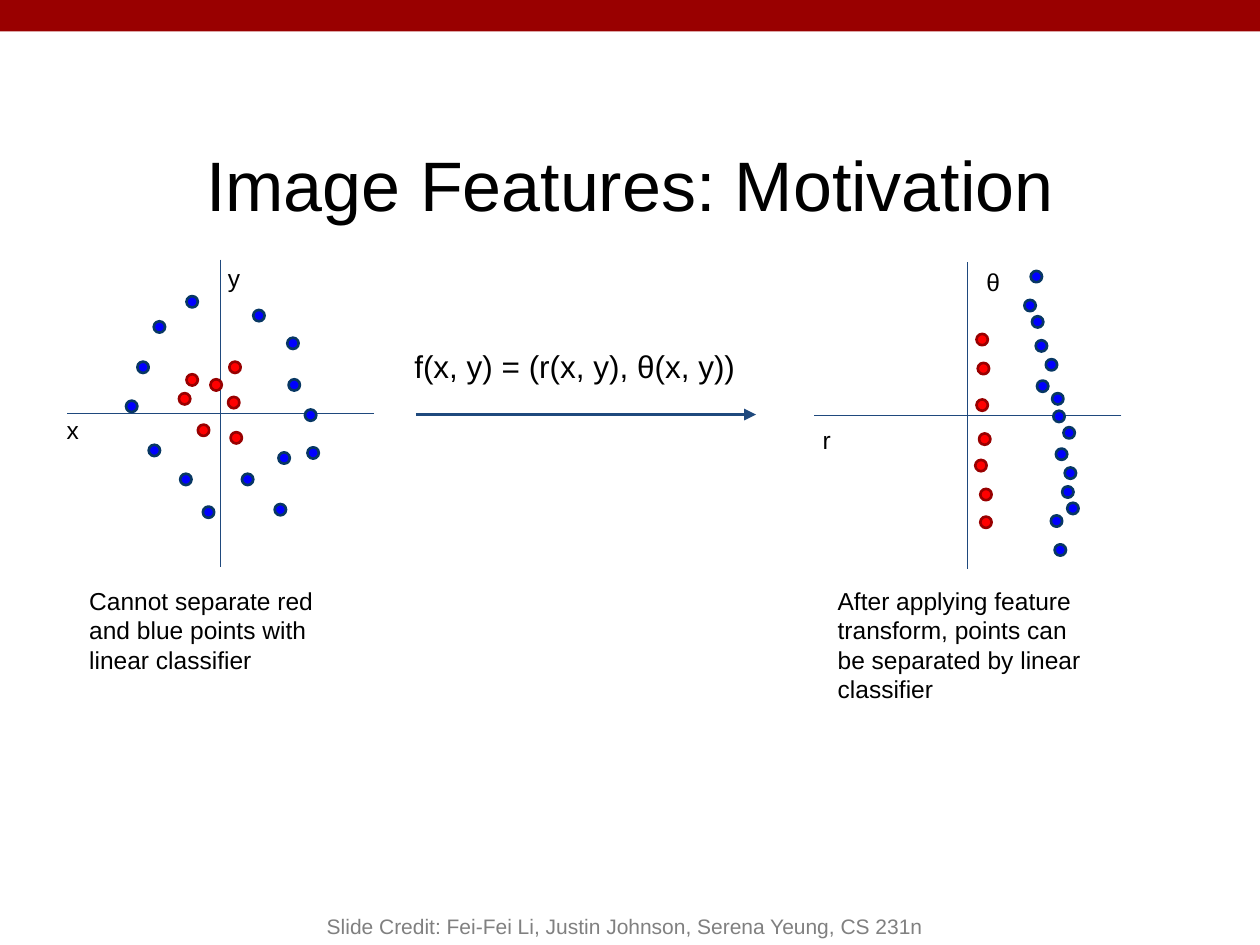
from typing import NamedTuple

import pptx
import pptx.util
from lxml import etree
from pptx.dml.color import RGBColor
from pptx.enum.shapes import MSO_CONNECTOR, MSO_SHAPE
from pptx.enum.text import MSO_ANCHOR, PP_ALIGN
from pptx.oxml.ns import qn
from pptx.util import Inches

BLACK = RGBColor(0x00, 0x00, 0x00)
GREY = RGBColor(0x80, 0x80, 0x80)
BANNER = RGBColor(0x99, 0x00, 0x00)
AXIS = RGBColor(0x1F, 0x49, 0x7D)
RED = RGBColor(0xFF, 0x00, 0x00)
RED_EDGE = RGBColor(0x98, 0x00, 0x00)
BLUE = RGBColor(0x00, 0x00, 0xFF)
BLUE_EDGE = RGBColor(0x07, 0x37, 0x63)

DOT = 0.09
AXIS_HALF = 1.22

Point = tuple[float, float]
Box = tuple[float, float, float, float]


class Label(NamedTuple):
    text: str
    box: Box


class Plot(NamedTuple):
    center: Point
    red: list[Point]
    blue: list[Point]
    labels: list[Label]


PLOTS = [
    Plot(
        center=(1.75, 3.28),
        red=[(1.48, 2.97), (1.82, 2.87), (1.57, 3.37), (1.83, 3.43),
             (1.81, 3.15), (1.42, 3.12), (1.67, 3.01)],
        blue=[(1.22, 2.55), (1.48, 2.35), (2.01, 2.46), (2.29, 3.01),
              (2.21, 3.59), (1.92, 3.76), (1.43, 3.76), (1.18, 3.53),
              (1.00, 3.18), (1.09, 2.87), (2.28, 2.68), (2.44, 3.55),
              (1.61, 4.02), (2.42, 3.25), (2.18, 4.00)],
        labels=[
            Label("x", (0.43, 3.19, 0.29, 0.3)),
            Label("y", (1.71, 1.99, 0.29, 0.3)),
            Label("Cannot separate red and blue points with linear classifier",
                  (0.61, 4.55, 2.27, 0.96)),
        ],
    ),
    Plot(
        center=(7.68, 3.3),
        red=[(7.78, 4.10), (7.76, 2.88), (7.75, 2.65), (7.77, 3.44),
             (7.75, 3.17), (7.74, 3.65), (7.78, 3.88)],
        blue=[(8.37, 4.32), (8.19, 2.51), (8.13, 2.38), (8.23, 3.02),
              (8.43, 3.86), (8.30, 2.85), (8.35, 3.12), (8.45, 3.71),
              (8.47, 3.99), (8.44, 3.39), (8.22, 2.70), (8.38, 3.56),
              (8.18, 2.15), (8.36, 3.26), (8.34, 4.09)],
        labels=[
            Label("r", (6.43, 3.27, 0.29, 0.3)),
            Label("θ", (7.73, 2.02, 0.29, 0.3)),
            Label("After applying feature transform, points can be separated "
                  "by linear classifier", (6.55, 4.55, 2.27, 0.96)),
        ],
    ),
]


def write_text(sp, text: str, *, size: float = 14, color: RGBColor = BLACK,
               align: PP_ALIGN = PP_ALIGN.LEFT,
               anchor: MSO_ANCHOR = MSO_ANCHOR.TOP,
               inset: Point = (0.1, 0.1)) -> None:
    tf = sp.text_frame
    tf.word_wrap = True
    tf.vertical_anchor = anchor
    tf.margin_left = tf.margin_right = Inches(inset[0])
    tf.margin_top = tf.margin_bottom = Inches(inset[1])
    p = tf.paragraphs[0]
    p.alignment = align
    r = p.add_run()
    r.text = text
    r.font.name = "Arial"
    r.font.size = pptx.util.Pt(size)
    r.font.color.rgb = color


def add_text(slide, label: Label, **fmt) -> None:
    sp = slide.shapes.add_textbox(*map(Inches, label.box))
    write_text(sp, label.text, **fmt)


def add_line(slide, start: Point, end: Point, width: float = 0.75,
             arrow: bool = False) -> None:
    line = slide.shapes.add_connector(
        MSO_CONNECTOR.STRAIGHT, *map(Inches, (*start, *end)))
    line.line.color.rgb = AXIS
    line.line.width = pptx.util.Pt(width)
    sp_pr = line._element.spPr
    if arrow:
        etree.SubElement(sp_pr.find(qn("a:ln")), qn("a:tailEnd"), type="triangle")
    etree.SubElement(sp_pr, qn("a:effectLst"))


def add_dot(slide, at: Point, fill: RGBColor, edge: RGBColor) -> None:
    sp = slide.shapes.add_shape(
        MSO_SHAPE.OVAL, *map(Inches, (*at, DOT, DOT)))
    sp.shadow.inherit = False
    sp.fill.solid()
    sp.fill.fore_color.rgb = fill
    sp.line.color.rgb = edge
    sp.line.width = pptx.util.Pt(1.5)


def add_plot(slide, plot: Plot) -> None:
    x, y = plot.center
    add_line(slide, (x, y - AXIS_HALF), (x, y + AXIS_HALF))
    add_line(slide, (x + AXIS_HALF, y), (x - AXIS_HALF, y))
    for at in plot.red:
        add_dot(slide, at, RED, RED_EDGE)
    for at in plot.blue:
        add_dot(slide, at, BLUE, BLUE_EDGE)
    for label in plot.labels:
        add_text(slide, label)


def main() -> None:
    prs = pptx.Presentation()
    prs.slide_width, prs.slide_height = Inches(10), Inches(7.5)
    slide = prs.slides.add_slide(prs.slide_layouts.get_by_name("Title Only"))

    banner = slide.shapes.add_shape(
        MSO_SHAPE.RECTANGLE, 0, 0, prs.slide_width, Inches(0.25))
    banner.shadow.inherit = False
    banner.fill.solid()
    banner.fill.fore_color.rgb = BANNER
    banner.line.fill.background()

    title = slide.shapes.title
    title.left, title.top = Inches(0.34), Inches(1.02)
    title.width, title.height = Inches(9.32), Inches(0.63)
    write_text(title, "Image Features: Motivation", size=40,
               align=PP_ALIGN.CENTER)

    for plot in PLOTS:
        add_plot(slide, plot)

    add_text(slide, Label("f(x, y) = (r(x, y), θ(x, y))",
                          (3.19, 2.65, 2.83, 0.49)), size=18)
    add_line(slide, (3.3, 3.29), (6, 3.29), width=2.25, arrow=True)
    add_text(slide, Label("Slide Credit: Fei-Fei Li, Justin Johnson, "
                          "Serena Yeung, CS 231n", (2, 7, 5.92, 0.5)),
             size=12, color=GREY, align=PP_ALIGN.CENTER,
             anchor=MSO_ANCHOR.BOTTOM, inset=(0.1, 0.05))

    prs.save("out.pptx")


if __name__ == "__main__":
    main()
